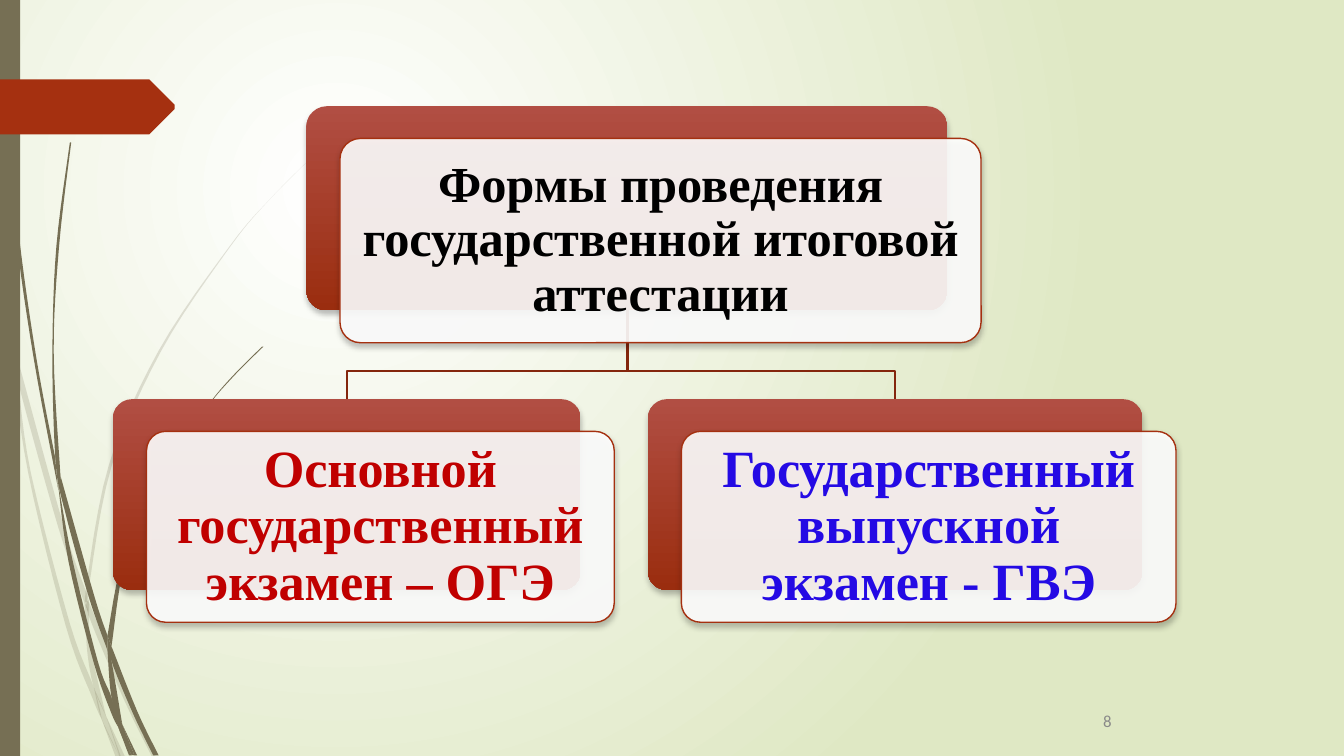
from lxml import etree
from pptx import Presentation
from pptx.dml.color import RGBColor
from pptx.enum.shapes import MSO_SHAPE
from pptx.enum.text import MSO_ANCHOR, PP_ALIGN
from pptx.oxml.ns import qn
from pptx.util import Inches, Pt

RECTANGLE = MSO_SHAPE.RECTANGLE
ROUNDED = MSO_SHAPE.ROUNDED_RECTANGLE
MIDDLE = MSO_ANCHOR.MIDDLE
CENTER, RIGHT = PP_ALIGN.CENTER, PP_ALIGN.RIGHT

SLIDE_WIDTH = 10
SLIDE_HEIGHT = SLIDE_WIDTH * 9 / 16
OLIVE, RUST, DARK_RUST = "766F54", "A53010", "84260D"
CARD_TOP, CARD_BOTTOM = "B14E43", "9A2D0F"
OFFSET_X, OFFSET_Y, TEXT_GAP = 0.25, 0.24, 0.04

PALE_GRASS = [
    ([(0.08, 2.63), (0.06, 2.41), (0, 2.11)], [(0, 2.24), (0.08, 2.58)]),
    ([(0.11, 2.59), (0.13, 2.82), (0.43, 3.91), (0.63, 4.49)],
     [(0.64, 4.4), (0.47, 3.9), (0.11, 2.59)]),
    ([(0.66, 4.47), (0.66, 4.58), (0.92, 5.2), (1.13, 5.63)],
     [(1.16, 5.63), (0.95, 5.19), (0.69, 4.55), (0.66, 4.47)]),
    ([(0.89, 5.63), (0.93, 5.63)], [(0.79, 5.33), (0.89, 5.63)]),
    ([(0.76, 5.36), (0.7, 5.12), (0.52, 4.64), (0.23, 3.52), (0.13, 2.82), (0.08, 2.63)],
     [(0.08, 2.63), (0.21, 3.52), (0.49, 4.66), (0.69, 5.2), (0.76, 5.36)]),
    ([(0.63, 4.49), (0.65, 4.85), (0.7, 5.12), (0.79, 5.33)],
     [(0.79, 5.33), (0.68, 4.84), (0.66, 4.56), (0.63, 4.49)]),
    ([(0.66, 4.47), (0.66, 4.38), (0.83, 3.47), (1.2, 2.61), (1.71, 1.84), (2.01, 1.48), (2.34, 1.15)],
     [(2.34, 1.15), (2.01, 1.48), (1.71, 1.83), (1.18, 2.61), (0.81, 3.46), (0.64, 4.38), (0.66, 4.47)]),
    ([(0.76, 5.36), (0.86, 5.63)], [(0.89, 5.63), (0.76, 5.36)]),
    ([(0.66, 4.58), (0.66, 4.47), (0.64, 4.4)], [(0.63, 4.49), (0.66, 4.56)]),
    ([(0.7, 5.12), (0.76, 5.36), (0.89, 5.63)], [(0.9, 5.63), (0.79, 5.33), (0.7, 5.12)]),
]
DARK_GRASS = [
    ([(0.02, 0), (0.05, 0.82), (0.12, 1.75), (0.25, 2.66), (0.42, 3.57), (0.43, 3.61)],
     [(0.41, 3.4), (0.27, 2.66), (0.14, 1.74), (0.06, 0.82), (0.03, 0)]),
    ([(0.45, 3.54), (0.48, 3.79), (0.66, 4.44), (0.8, 4.84)],
     [(0.8, 4.73), (0.7, 4.43), (0.45, 3.54)]),
    ([(0.83, 4.81), (0.83, 4.92), (0.99, 5.31), (1.14, 5.62)],
     [(1.18, 5.62), (1.02, 5.29), (0.83, 4.81)]),
    ([(0.88, 5.41), (0.83, 5.19), (0.73, 4.93), (0.54, 4.17), (0.43, 3.58)],
     [(0.43, 3.58), (0.51, 4.18), (0.7, 4.94), (0.83, 5.31), (0.88, 5.41)]),
    ([(0.45, 3.54), (0.4, 2.62), (0.44, 1.83), (0.53, 1.06)],
     [(0.52, 1.06), (0.42, 1.83), (0.39, 2.62), (0.41, 3.37), (0.45, 3.54)]),
    ([(1, 5.62), (1.02, 5.62)], [(0.91, 5.39), (1, 5.62)]),
    ([(0.41, 3.37), (0.43, 3.58), (0.48, 3.79)], [(0.45, 3.54), (0.41, 3.37)]),
    ([(0.83, 4.81), (0.94, 4.14), (1.19, 3.57), (1.53, 3.05), (1.73, 2.81), (1.96, 2.58)],
     [(1.95, 2.58), (1.73, 2.8), (1.53, 3.04), (1.17, 3.56), (0.92, 4.13), (0.8, 4.73)]),
    ([(0.88, 5.41), (0.96, 5.62)], [(0.98, 5.62), (0.88, 5.41)]),
    ([(0.8, 4.84), (0.83, 5.19), (0.91, 5.39)], [(0.91, 5.39), (0.83, 4.92), (0.8, 4.84)]),
    ([(0.8, 4.84), (0.83, 4.92)], [(0.83, 4.81), (0.8, 4.73)]),
    ([(0.83, 5.19), (0.88, 5.41), (0.98, 5.62)], [(1, 5.62), (0.91, 5.39), (0.83, 5.19)]),
]
ARROW = [(1.3, 0.81), (1.11, 1), (0, 1), (0, 0.59), (1.11, 0.59), (1.3, 0.78)]


def color(value):
    return RGBColor.from_string(value)


def add_child(parent, tag, **attributes):
    return etree.SubElement(parent, qn(tag), {key: str(value) for key, value in attributes.items()})


def paint(shape, fill=None, opacity=100, line=None, width=0.75):
    shape.shadow.inherit = False
    if fill:
        shape.fill.solid()
        shape.fill.fore_color.rgb = color(fill)
        if opacity < 100:
            add_child(shape.fill._xPr.find(".//" + qn("a:srgbClr")), "a:alpha", val=opacity * 1000)
    else:
        shape.fill.background()
    if line:
        shape.line.color.rgb = color(line)
        shape.line.width = Pt(width)
    else:
        shape.line.fill.background()


def set_gradient(fill, start, end):
    fill.gradient()
    for stop, value in zip(fill.gradient_stops, (start, end)):
        stop.color.rgb = color(value)


def add_background(slide):
    set_gradient(slide.background.fill, "FFFFFF", "DFE8C4")
    gradient = slide._element.find(".//" + qn("a:gradFill"))
    gradient.remove(gradient.find(qn("a:lin")))
    circle = add_child(gradient, "a:path", path="circle")
    add_child(circle, "a:fillToRect", l=50000, t=50000, r=100000, b=100000)


def smooth(knots, steps=6):
    points = [knots[0]]
    padded = [knots[0], *knots, knots[-1]]
    for a, b, c, d in zip(padded, padded[1:], padded[2:], padded[3:]):
        for step in range(1, steps + 1):
            t = step / steps
            points.append(tuple(
                q + t / 2 * (r - p + t * (2 * p - 5 * q + 4 * r - s + t * (3 * q - p - 3 * r + s)))
                for p, q, r, s in zip(a, b, c, d)))
    return points


def add_outline(slide, points, close=True, **style):
    corners = [(Inches(x), Inches(y)) for x, y in points]
    builder = slide.shapes.build_freeform(*corners[0], scale=1.0)
    builder.add_line_segments(corners[1:], close=close)
    paint(builder.convert_to_shape(), **style)


def add_box(slide, kind, box, **style):
    shape = slide.shapes.add_shape(kind, *map(Inches, box))
    paint(shape, **style)
    return shape


def add_shadow(shape):
    effects = shape._element.spPr.find(qn("a:effectLst"))
    shadow = add_child(effects, "a:outerShdw", blurRad=Pt(3), dist=Pt(2), dir=5400000, rotWithShape=0)
    add_child(add_child(shadow, "a:srgbClr", val="000000"), "a:alpha", val=25000)


def add_text(slide, text, box, size, font, fill, bold=False, align=CENTER, spacing=1.0, inset=None):
    frame = slide.shapes.add_textbox(*map(Inches, box)).text_frame
    frame.word_wrap = True
    frame.vertical_anchor = MIDDLE
    if inset is not None:
        frame.margin_left = frame.margin_right = Inches(inset)
        frame.margin_top = frame.margin_bottom = Inches(inset)
    paragraph = frame.paragraphs[0]
    paragraph.alignment = align
    paragraph.line_spacing = spacing
    run = paragraph.add_run()
    run.text = text
    run.font.size = Pt(size)
    run.font.name = font
    run.font.bold = bold
    run.font.color.rgb = color(fill)


def add_card(slide, text, box, size, fill, inset):
    left, top, width, height = box
    back = add_box(slide, ROUNDED, box)
    set_gradient(back.fill, CARD_TOP, CARD_BOTTOM)
    back.fill.gradient_angle = 270
    left, top = left + OFFSET_X, top + OFFSET_Y
    front = add_box(slide, ROUNDED, (left, top, width, height), fill="FFFFFF", opacity=90, line=RUST)
    for shape in (back, front):
        shape.adjustments[0] = 0.1
        add_shadow(shape)
    text_box = (left + TEXT_GAP, top + TEXT_GAP, width - 2 * TEXT_GAP, height - 2 * TEXT_GAP)
    add_text(slide, text, text_box, size, "Times New Roman", fill, bold=True, spacing=0.9, inset=inset)


def main():
    presentation = Presentation()
    presentation.slide_width = Inches(SLIDE_WIDTH)
    presentation.slide_height = Inches(SLIDE_HEIGHT)
    slide = presentation.slides.add_slide(presentation.slide_layouts[6])
    add_background(slide)
    for grass, opacity in ((PALE_GRASS, 20), (DARK_GRASS, 100)):
        for outward, backward in grass:
            add_outline(slide, smooth(outward) + smooth(backward), fill=OLIVE, opacity=opacity)
    add_box(slide, RECTANGLE, (0, 0, 0.15, SLIDE_HEIGHT), fill=OLIVE)
    add_outline(slide, ARROW, fill=RUST)
    for branch in (6.66, 2.58):
        elbow = [(4.67, 2.31), (4.67, 2.76), (branch, 2.76), (branch, 2.97)]
        add_outline(slide, elbow, close=False, line=DARK_RUST, width=1.25)
    add_card(slide, "Формы проведения государственной итоговой аттестации",
             (2.28, 0.79, 4.77, 1.52), 27, "000000", 0.11)
    add_card(slide, "Основной государственный экзамен – ОГЭ",
             (0.84, 2.97, 3.48, 1.42), 28, "C00000", 0.12)
    add_card(slide, "Государственный выпускной экзамен - ГВЭ",
             (4.82, 2.97, 3.68, 1.42), 28, "240AE4", 0.12)
    add_text(slide, "8", (6.62, 5.21, 1.75, 0.3), 9, "Calibri", "898989", align=RIGHT)
    presentation.save("out.pptx")


if __name__ == "__main__":
    main()
